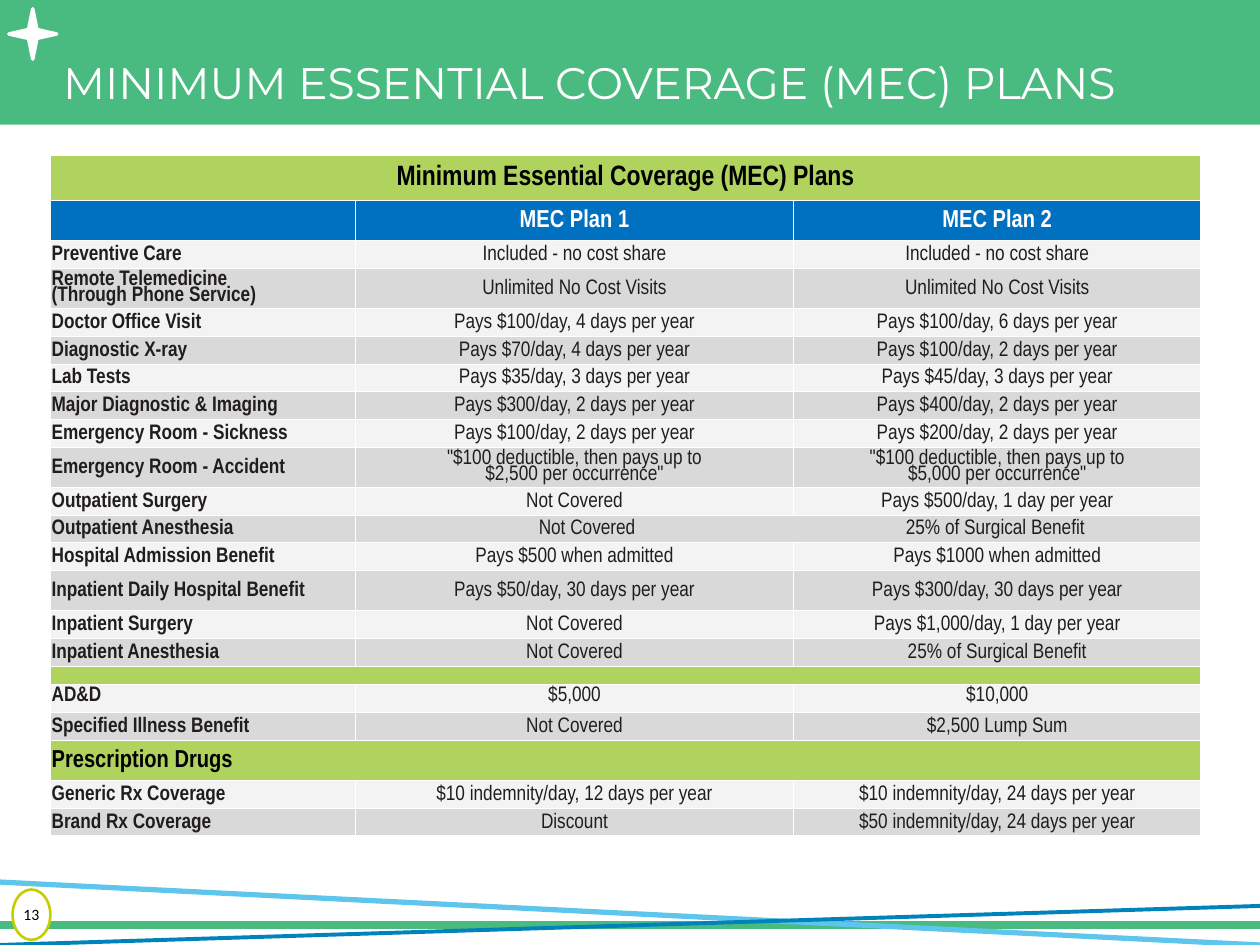
from lxml import etree
from pptx import Presentation
from pptx.dml.color import RGBColor
from pptx.enum.shapes import MSO_CONNECTOR, MSO_SHAPE
from pptx.enum.text import MSO_ANCHOR, MSO_AUTO_SIZE, PP_ALIGN
from pptx.oxml.ns import qn
from pptx.util import Inches, Pt

LEFT, CENTER = PP_ALIGN.LEFT, PP_ALIGN.CENTER
TOP, MIDDLE = MSO_ANCHOR.TOP, MSO_ANCHOR.MIDDLE
NO_FIT = MSO_AUTO_SIZE.NONE
RECT, STAR, OVAL = MSO_SHAPE.RECTANGLE, MSO_SHAPE.STAR_4_POINT, MSO_SHAPE.OVAL
STRAIGHT = MSO_CONNECTOR.STRAIGHT

GREEN, LIME, BLUE = "49BB80", "B0D35D", "0070C0"
WHITE, BLACK, INK = "FFFFFF", "000000", "211D1E"
STRIPES = ["F3F3F3", "D9D9D9"]
TABLE_FONT = "Arial Narrow"
COL_WIDTHS = [2.42, 3.48, 3.23]
ROW_H, TALL_H, GAP_H = 0.22, 0.32, 0.15

MEDICAL = [
    ("Preventive Care", "Included - no cost share", "Included - no cost share"),
    ("Remote Telemedicine\n(Through Phone Service)", "Unlimited No Cost Visits", "Unlimited No Cost Visits"),
    ("Doctor Office Visit", "Pays $100/day, 4 days per year", "Pays $100/day, 6 days per year"),
    ("Diagnostic X-ray", "Pays $70/day, 4 days per year", "Pays $100/day, 2 days per year"),
    ("Lab Tests", "Pays $35/day, 3 days per year", "Pays $45/day, 3 days per year"),
    ("Major Diagnostic & Imaging", "Pays $300/day, 2 days per year", "Pays $400/day, 2 days per year"),
    ("Emergency Room - Sickness", "Pays $100/day, 2 days per year", "Pays $200/day, 2 days per year"),
    ("Emergency Room - Accident", '"$100 deductible, then pays up to\n$2,500 per occurrence"',
     '"$100 deductible, then pays up to\n$5,000 per occurrence"'),
    ("Outpatient Surgery", "Not Covered", "Pays $500/day, 1 day per year"),
    ("Outpatient Anesthesia", "\tNot Covered\t25% of Surgical Benefit"),
    ("Hospital Admission Benefit", "Pays $500 when admitted", "Pays $1000 when admitted"),
    ("Inpatient Daily Hospital Benefit", "Pays $50/day, 30 days per year", "Pays $300/day, 30 days per year"),
    ("Inpatient Surgery", "Not Covered", "Pays $1,000/day, 1 day per year"),
    ("Inpatient Anesthesia", "Not Covered", "25% of Surgical Benefit"),
]
EXTRAS = [
    ("AD&D", "$5,000", "$10,000"),
    ("Specified Illness Benefit", "Not Covered", "$2,500 Lump Sum"),
]
DRUGS = [
    ("Generic Rx Coverage", "$10 indemnity/day, 12 days per year", "$10 indemnity/day, 24 days per year"),
    ("Brand Rx Coverage", "Discount", "$50 indemnity/day, 24 days per year"),
]
TALL_ROWS = {"Remote Telemedicine\n(Through Phone Service)", "Emergency Room - Accident",
             "Inpatient Daily Hospital Benefit"}


def rgb(value):
    return RGBColor.from_string(value)


def write(tf, text, font=TABLE_FONT, size=12, color=INK, bold=False, align=LEFT, spacing=None, tabs=()):
    for i, line in enumerate(text.split("\n")):
        p = tf.paragraphs[0] if i == 0 else tf.add_paragraph()
        p.alignment = align
        if spacing:
            p.line_spacing = spacing
        if tabs:
            tab_list = etree.SubElement(p._p.get_or_add_pPr(), qn("a:tabLst"))
            for pos in tabs:
                etree.SubElement(tab_list, qn("a:tab"), pos=str(Inches(pos)), algn="ctr")
        if not line:
            p._p.get_or_add_endParaRPr().set("sz", str(size * 100))
            continue
        r = p.add_run()
        r.text = line
        r.font.name, r.font.size, r.font.bold = font, Pt(size), bold
        r.font.color.rgb = rgb(color)


class SlideBuilder:
    def __init__(self, prs):
        self.s = prs.slides.add_slide(prs.slide_layouts[5])

    def shape(self, kind, x, y, w, h, fill, line=None, width=1):
        sp = self.s.shapes.add_shape(kind, Inches(x), Inches(y), Inches(w), Inches(h))
        sp.shadow.inherit = False
        sp.fill.solid()
        sp.fill.fore_color.rgb = rgb(fill)
        if line:
            sp.line.color.rgb = rgb(line)
            sp.line.width = Pt(width)
        else:
            sp.line.fill.background()
        return sp

    def line(self, x1, y1, x2, y2, color, width):
        ln = self.s.shapes.add_connector(STRAIGHT, Inches(x1), Inches(y1), Inches(x2), Inches(y2))
        ln.line.color.rgb = rgb(color)
        ln.line.width = Pt(width)
        etree.SubElement(ln._element.spPr, qn("a:effectLst"))

    def title(self, text, x, y, w, h):
        sp = self.s.shapes.title
        sp.left, sp.top, sp.width, sp.height = Inches(x), Inches(y), Inches(w), Inches(h)
        self.s.shapes._spTree.append(sp._element)
        tf = sp.text_frame
        tf.word_wrap, tf.auto_size, tf.vertical_anchor = True, NO_FIT, MIDDLE
        write(tf, text, font="Montserrat", size=25.2, color=WHITE, spacing=0.9)

    def badge(self, text, x, y, w, h):
        sp = self.shape(OVAL, x, y, w, h, WHITE, "C3CF00", 1.5)
        tf = sp.text_frame
        tf.margin_left = tf.margin_right = tf.margin_top = tf.margin_bottom = 0
        tf.vertical_anchor = MIDDLE
        write(tf, text, font="Calibri", size=9, color=BLACK, align=CENTER)

    def table(self, x, y, col_widths, row_heights):
        shape = self.s.shapes.add_table(len(row_heights), len(col_widths), Inches(x), Inches(y),
                                        Inches(sum(col_widths)), Inches(sum(row_heights)))
        table = shape.table
        for col, width in zip(table.columns, col_widths):
            col.width = Inches(width)
        for row, height in zip(table.rows, row_heights):
            row.height = Inches(height)
        return table

    def cell(self, cell, text, fill, anchor=MIDDLE, **fmt):
        tc_pr = cell._tc.get_or_add_tcPr()
        for side in ("lnL", "lnR", "lnT", "lnB"):
            ln = etree.SubElement(tc_pr, qn("a:" + side), w=str(Pt(0.5)))
            solid = etree.SubElement(ln, qn("a:solidFill"))
            etree.SubElement(solid, qn("a:srgbClr"), val=WHITE)
        cell.fill.solid()
        cell.fill.fore_color.rgb = rgb(fill)
        cell.margin_left = cell.margin_right = cell.margin_top = Inches(0.01)
        cell.margin_bottom = 0
        cell.vertical_anchor = anchor
        write(cell.text_frame, text, spacing=0.8 if "\n" in text else None, **fmt)

    def banner(self, table, row, text, **fmt):
        table.cell(row, 0).merge(table.cell(row, len(table.columns) - 1))
        self.cell(table.cell(row, 0), text, LIME, color=BLACK, bold=True, **fmt)

    def benefits(self, table, start, rows, anchors=None):
        for i, values in enumerate(rows):
            row = start + i
            if len(values) == 2:
                table.cell(row, 1).merge(table.cell(row, 2))
            for col, text in enumerate(values):
                tabs = (1.83, 5.07) if "\t" in text else ()
                align = LEFT if col == 0 or tabs else CENTER
                self.cell(table.cell(row, col), text, STRIPES[i % 2], bold=col == 0, align=align,
                          tabs=tabs, anchor=(anchors or {}).get(i, MIDDLE))


def main():
    prs = Presentation()
    prs.slide_width, prs.slide_height = Inches(10), Inches(7.5)
    b = SlideBuilder(prs)

    b.shape(RECT, -0.01, 0, 10.01, 0.99, GREEN)
    b.line(-0.01, 7.34, 10, 7.34, GREEN, 4.5)
    b.line(10, 7.5, -0.01, 7, "5EC5ED", 3)
    b.line(-0.01, 7.5, 10, 7.19, "0083BB", 2.25)
    star = b.shape(STAR, 0.07, 0.07, 0.38, 0.4, WHITE, WHITE, 2)
    star.adjustments[0] = 0.125
    b.title("MINIMUM ESSENTIAL COVERAGE (MEC) PLANS", 0.4, 0.4, 9.45, 0.55)
    b.badge("13", 0.1, 7.06, 0.3, 0.4)

    medical_heights = [TALL_H if row[0] in TALL_ROWS else ROW_H for row in MEDICAL]
    heights = ([0.36, TALL_H] + medical_heights + [GAP_H] + [ROW_H] * len(EXTRAS)
               + [TALL_H] + [ROW_H] * len(DRUGS))
    extras_at = 2 + len(MEDICAL) + 1
    drugs_at = extras_at + len(EXTRAS) + 1

    table = b.table(0.4, 1.23, COL_WIDTHS, heights)
    b.banner(table, 0, "Minimum Essential Coverage (MEC) Plans", size=16, align=CENTER)
    for col, text in enumerate(("", "MEC Plan 1", "MEC Plan 2")):
        b.cell(table.cell(1, col), text, BLUE, size=14, color=WHITE, bold=True, align=CENTER)
    b.benefits(table, 2, MEDICAL)
    b.banner(table, extras_at - 1, "", size=8)
    b.benefits(table, extras_at, EXTRAS, anchors={0: TOP})
    b.banner(table, drugs_at - 1, "Prescription Drugs", size=14)
    b.benefits(table, drugs_at, DRUGS)

    prs.save("out.pptx")


if __name__ == "__main__":
    main()
